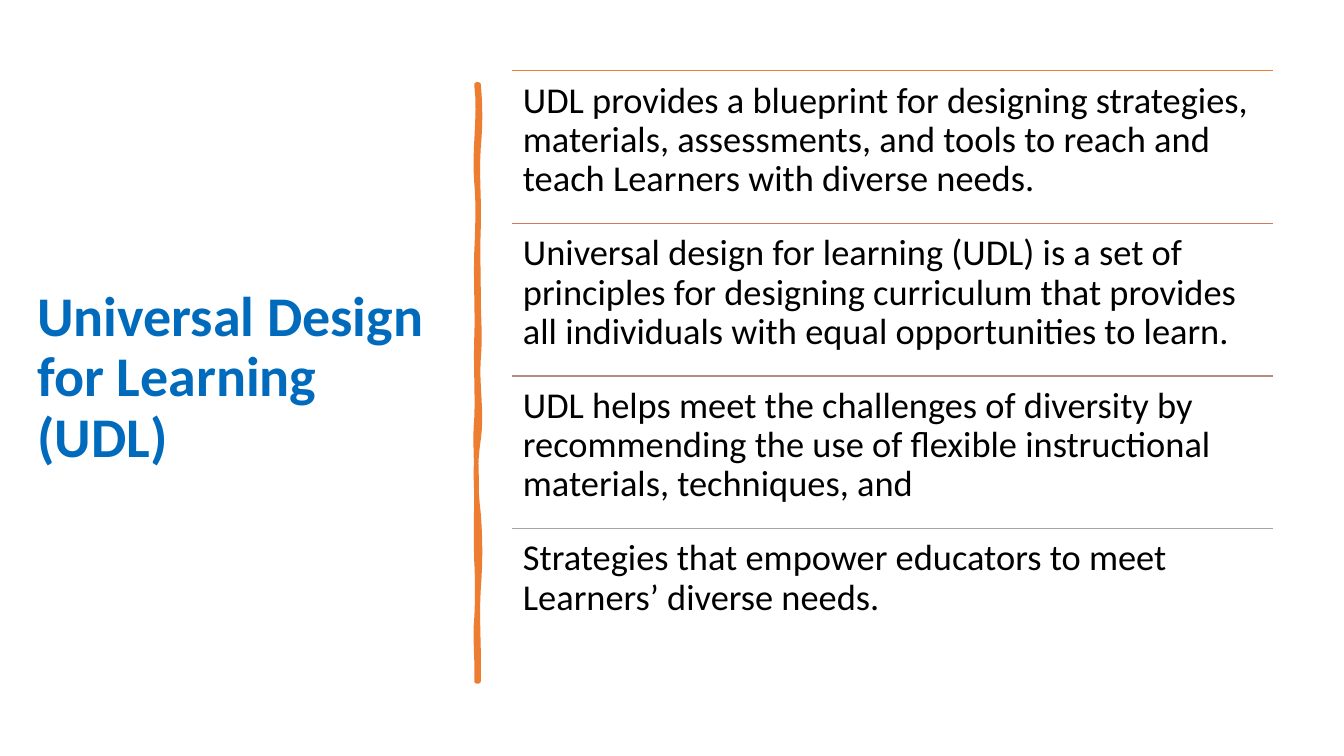
from dataclasses import dataclass

from lxml import etree
from pptx import Presentation
from pptx import util as u
from pptx.dml.color import RGBColor
from pptx.enum import shapes, text
from pptx.oxml.ns import qn


@dataclass(frozen=True)
class Theme:
    """Colours, font and type sizes of the slide."""
    face: str = "Calibri"
    head: str = "006BBC"
    ink: str = "000000"
    bar: str = "ED7D31"
    rules: tuple = ("ED7D31", "D17B5C", "B98A82", "A5A5A5")
    big: int = 40
    body: int = 26


THEME = Theme()

POINTS = (
    "UDL provides a blueprint for designing strategies, materials, "
    "assessments, and tools to reach and teach Learners with diverse needs.",
    "Universal design for learning (UDL) is a set of principles for designing "
    "curriculum that provides all individuals with equal opportunities to learn.",
    "UDL helps meet the challenges of diversity by recommending the use of "
    "flexible instructional materials, techniques, and",
    "Strategies that empower educators to meet Learners’ diverse needs.",
)

DOWN = ((1.58, 2, 2), (3.61, -2, 1), (5.34, -1, 0), (6.91, 0, 2),
        (8.94, -2, 4), (10.82, -4, -3), (12.7, 2, 2), (15.04, -2, 1))
UP = ((13.44, 1, -2), (12.02, 1, 1), (9.99, -1, 0), (8.41, 0, -2),
      (6.38, 1, -1), (4.22, 1, -1), (2.47, 1, 2), (0, -3, 4))
BEND = 0.025
STEPS = 8


def put(item, form):
    """Set each format value in a dict on an item."""
    for key, val in form.items():
        setattr(item, key, val)


def write(frame, words, size, hue, bold, form):
    """Fill a text frame with one styled paragraph."""
    put(frame, {"word_wrap": True, "auto_size": text.MSO_AUTO_SIZE.NONE, **form})
    para = frame.paragraphs[0]
    put(para, {"text": words, "line_spacing": 0.9, "alignment": text.PP_ALIGN.LEFT})
    put(para.runs[0].font, {"name": THEME.face, "size": u.Pt(size), "bold": bold})
    para.runs[0].font.color.rgb = RGBColor.from_string(hue)


def add_head(slide, left, top, wide, high):
    """Place the title in its box."""
    head = slide.shapes.title
    put(head, {"left": u.Cm(left), "top": u.Cm(top),
               "width": u.Cm(wide), "height": u.Cm(high)})
    write(head.text_frame, "Universal Design for Learning (UDL)", THEME.big,
          THEME.head, True, {"vertical_anchor": text.MSO_ANCHOR.MIDDLE})


def trace(edge, start, spans):
    """Return the points of a wavy edge made of bent spans."""
    dots = []
    for end, near, far in spans:
        for step in range(1, STEPS + 1):
            t = step / STEPS
            sway = 3 * t * (1 - t) * ((1 - t) * near + t * far)
            dots.append((u.Cm(edge + sway * BEND), u.Cm(start + (end - start) * t)))
        start = end
    return dots


def add_bar(slide, left, top, wide, high):
    """Draw the hand-drawn upright bar from the top left of its box."""
    right = [(x, y + u.Cm(top)) for x, y in trace(left + wide, 0, DOWN)]
    back = [(x, y + u.Cm(top)) for x, y in trace(left, high, UP)]
    pen = slide.shapes.build_freeform(u.Cm(left + wide), u.Cm(top))
    pen.add_line_segments(right + [(u.Cm(left), u.Cm(top + high))] + back)
    bar = pen.convert_to_shape()
    bar.shadow.inherit = False
    bar.fill.solid()
    bar.line.width = u.Pt(3.25)
    for paint in (bar.fill.fore_color, bar.line.color):
        paint.rgb = RGBColor.from_string(THEME.bar)


def add_list(slide, left, top, wide, high):
    """Stack the ruled points in equal rows of the box."""
    row = high / len(POINTS)
    pads = {f"margin_{side}": u.Cm(0.28) for side in ("left", "top", "right", "bottom")}
    for rank, (words, hue) in enumerate(zip(POINTS, THEME.rules)):
        y = u.Cm(top + rank * row)
        rule = slide.shapes.add_connector(
            shapes.MSO_CONNECTOR.STRAIGHT, u.Cm(left), y, u.Cm(left + wide), y)
        rule.line.width = u.Pt(1)
        rule.line.color.rgb = RGBColor.from_string(hue)
        etree.SubElement(rule._element.spPr, qn("a:effectLst"))
        box = slide.shapes.add_textbox(u.Cm(left), y, u.Cm(wide), u.Cm(row))
        write(box.text_frame, words, THEME.body, THEME.ink, False,
              {"vertical_anchor": text.MSO_ANCHOR.TOP, **pads})


def main():
    """Build and save the slide."""
    deck = Presentation()
    put(deck, {"slide_width": u.Cm(33.87), "slide_height": u.Cm(19.05)})
    slide = deck.slides.add_slide(deck.slide_layouts[5])
    add_head(slide, 0.69, 1.78, 10.95, 15.52)
    add_bar(slide, 12.01, 2.13, 0.05, 15.04)
    add_list(slide, 12.9, 1.78, 19.18, 15.38)
    deck.save("out.pptx")


if __name__ == "__main__":
    main()
